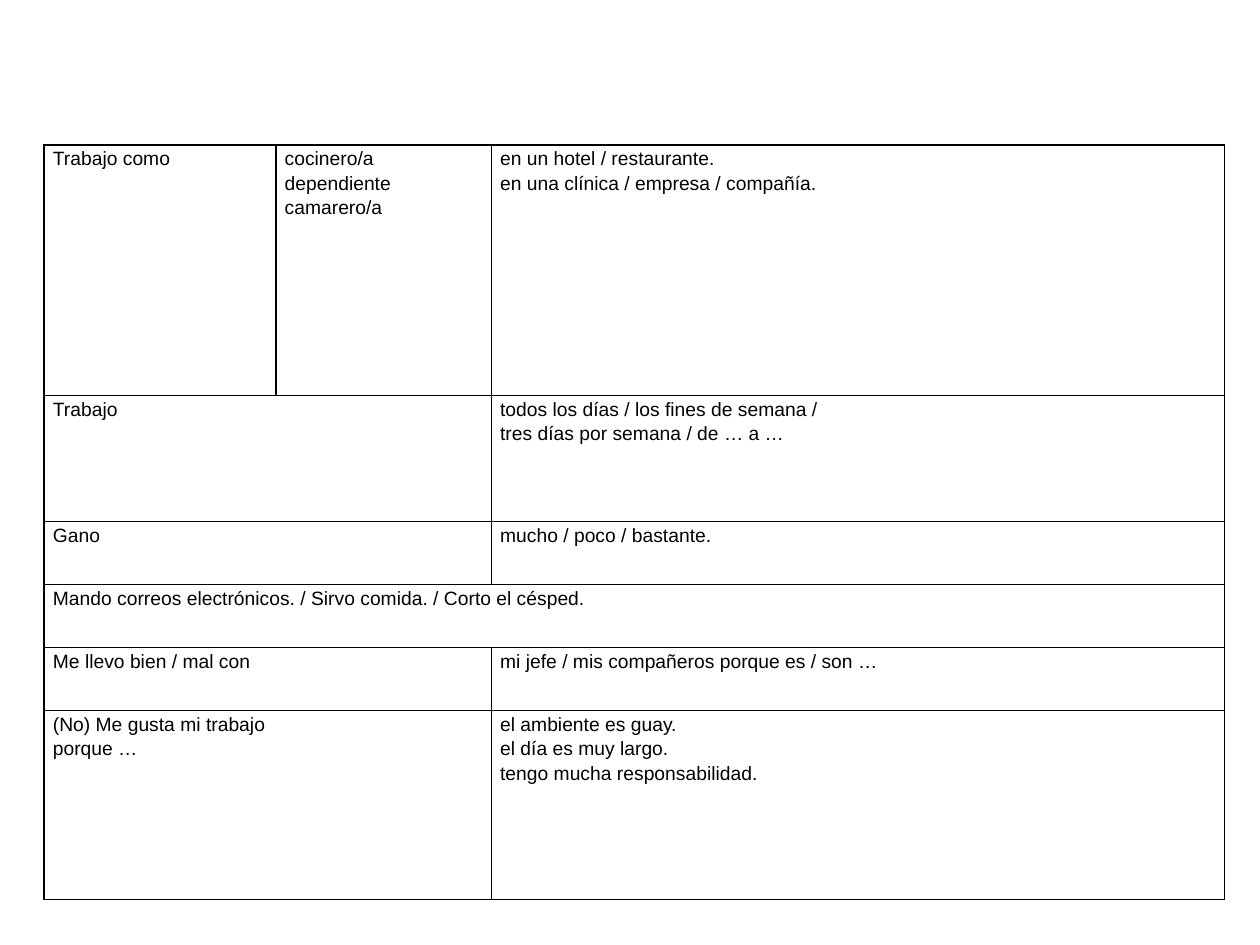
from lxml.etree import SubElement as Sub
from pptx import Presentation
from pptx.dml.color import RGBColor
from pptx.oxml.ns import qn
from pptx.util import Inches, Pt

INK = "000000"
LEFT, TOP = 0.35, 1.15
COLS = [1.84, 1.71, 5.82]
ROWS = [
    (1.99, ["Trabajo como", "cocinero/a\ndependiente\ncamarero/a",
            "en un hotel / restaurante.\nen una clínica / empresa / compañía."]),
    (1, ["Trabajo", None,
         "todos los días / los fines de semana /\ntres días por semana / de … a …"]),
    (0.5, ["Gano", None, "mucho / poco / bastante."]),
    (0.5, ["Mando correos electrónicos. / Sirvo comida. / Corto el césped.", None, None]),
    (0.5, ["Me llevo bien / mal con", None, "mi jefe / mis compañeros porque es / son …"]),
    (1.5, ["(No) Me gusta mi trabajo\nporque …", None,
           "el ambiente es guay.\nel día es muy largo.\ntengo mucha responsabilidad."]),
]
PAD = {"margin_left": Inches(0.07), "margin_right": Inches(0.07),
       "margin_top": 0, "margin_bottom": 0}
FONT = {"name": "Arial", "size": Pt(11)}


def paint(fmt, hue):
    fmt.rgb = RGBColor.from_string(hue)


def frame(cell):
    props = cell._tc.get_or_add_tcPr()
    for side in ("a:lnL", "a:lnR", "a:lnT", "a:lnB"):
        line = Sub(props, qn(side), w=str(Pt(1)))
        Sub(Sub(line, qn("a:solidFill")), qn("a:srgbClr"), val=INK)


def write(cell, text):
    cell.text = text
    for par in cell.text_frame.paragraphs:
        par.line_spacing = 1.15
        for run in par.runs:
            for key, val in FONT.items():
                setattr(run.font, key, val)
            paint(run.font.color, INK)


def style(cell):
    for key, val in PAD.items():
        setattr(cell, key, val)
    frame(cell)
    cell.fill.background()


def main():
    deck = Presentation()
    deck.slide_width, deck.slide_height = Inches(10), Inches(7.5)
    slide = deck.slides.add_slide(deck.slide_layouts[6])
    size = sum(COLS), sum(high for high, _ in ROWS)
    box = map(Inches, (LEFT, TOP, *size))
    grid = slide.shapes.add_table(len(ROWS), len(COLS), *box).table
    grid.first_row = grid.horz_banding = False
    for col, wide in zip(grid.columns, COLS):
        col.width = Inches(wide)
    for i, (high, texts) in enumerate(ROWS):
        grid.rows[i].height = Inches(high)
        span = 1 + texts.count(None)
        if span > 1:
            grid.cell(i, 0).merge(grid.cell(i, span - 1))
        for j, text in enumerate(texts):
            cell = grid.cell(i, j)
            style(cell)
            if text:
                write(cell, text)
    deck.save("out.pptx")


if __name__ == "__main__":
    main()
